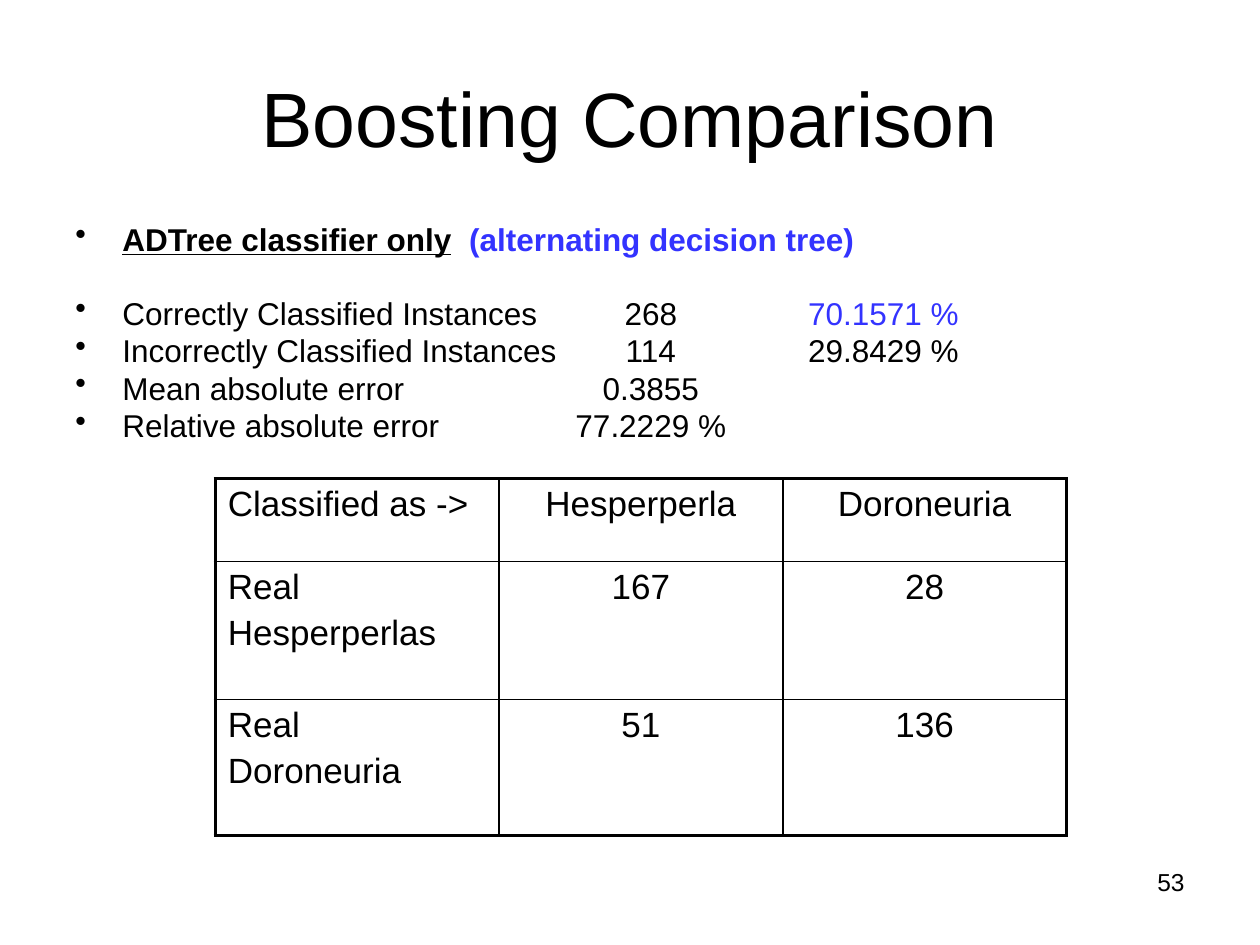
from dataclasses import dataclass

from lxml import etree
from pptx import Presentation
from pptx.dml.color import RGBColor
from pptx.enum.text import MSO_ANCHOR, PP_ALIGN
from pptx.oxml.ns import qn
from pptx.util import Cm, Pt

LEFT, CENTER, RIGHT = PP_ALIGN.LEFT, PP_ALIGN.CENTER, PP_ALIGN.RIGHT
TOP, MIDDLE = MSO_ANCHOR.TOP, MSO_ANCHOR.MIDDLE


@dataclass(frozen=True)
class Theme:
    font: str = "Arial"
    ink: str = "000000"
    accent: str = "3333FF"
    title: int = 44
    body: int = 18
    table: int = 20
    number: int = 14
    outer: float = 2.25
    inner: float = 1


THEME = Theme()

TITLE = "Boosting Comparison"
HEADING = ("ADTree classifier only", "(alternating decision tree)")
RESULTS = [
    ("Correctly Classified Instances", "268", "70.1571 %"),
    ("Incorrectly Classified Instances", "114", "29.8429 %"),
    ("Mean absolute error", "0.3855"),
    ("Relative absolute error", "77.2229 %"),
]
BEST = "70.1571 %"
MATRIX = [
    ("Classified as ->", "Hesperperla", "Doroneuria"),
    ("Real\nHesperperlas", "167", "28"),
    ("Real\nDoroneuria", "51", "136"),
]
NUMBER = "53"

COL_WIDTH = Cm(5.72)
ROW_HEIGHTS = [Cm(1.67), Cm(2.78), Cm(2.74)]
TABS = [(Cm(11.6), "ctr"), (Cm(14.77), "l")]
INDENT = Cm(0.95)
LINE_GAP, BLOCK_GAP = Pt(4.2), Pt(25)


def style(p, size, align=LEFT):
    p.alignment = align
    p.font.name = THEME.font
    p.font.size = Pt(size)
    p.font.color.rgb = RGBColor.from_string(THEME.ink)


def add_run(p, text, accent=False):
    r = p.add_run()
    r.text = text
    if accent:
        r.font.color.rgb = RGBColor.from_string(THEME.accent)
    return r


def add_box(s, left, top, width, height):
    tf = s.shapes.add_textbox(left, top, width, height).text_frame
    tf.word_wrap = True
    return tf


def add_bullet(p, gap):
    style(p, THEME.body)
    p.line_spacing = 0.8
    p.space_before = gap
    pPr = p._p.get_or_add_pPr()
    pPr.set("marL", str(INDENT))
    pPr.set("indent", str(-INDENT))
    bullet = etree.Element(qn("a:buChar"), char="•")
    tabs = etree.Element(qn("a:tabLst"))
    for pos, align in TABS:
        etree.SubElement(tabs, qn("a:tab"), pos=str(pos), algn=align)
    defaults = pPr.find(qn("a:defRPr"))
    defaults.addprevious(bullet)
    defaults.addprevious(tabs)


def add_results(s):
    tf = add_box(s, Cm(1.27), Cm(4.45), Cm(20), Cm(4.98))
    p = tf.paragraphs[0]
    add_bullet(p, LINE_GAP)
    p.font.bold = True
    name, note = HEADING
    add_run(p, name).font.underline = True
    add_run(p, "  ")
    add_run(p, note, accent=True)
    for i, row in enumerate(RESULTS):
        p = tf.add_paragraph()
        add_bullet(p, LINE_GAP if i else BLOCK_GAP)
        for j, value in enumerate(row):
            add_run(p, "\t" + value if j else value, accent=value == BEST)


def set_borders(cell, row, col):
    last = len(MATRIX) - 1
    edges = {"lnL": col == 0, "lnR": col == last, "lnT": row == 0, "lnB": row == last}
    tcPr = cell._tc.get_or_add_tcPr()
    for tag, is_outer in edges.items():
        width = Pt(THEME.outer if is_outer else THEME.inner)
        ln = etree.SubElement(tcPr, qn("a:" + tag), w=str(width))
        fill = etree.SubElement(ln, qn("a:solidFill"))
        etree.SubElement(fill, qn("a:srgbClr"), val=THEME.ink)


def add_matrix(s):
    n = len(MATRIX)
    table = s.shapes.add_table(
        n, n, Cm(4.34), Cm(9.65), COL_WIDTH * n, sum(ROW_HEIGHTS)
    ).table
    table.first_row = table.horz_banding = False
    for col in table.columns:
        col.width = COL_WIDTH
    for i, values in enumerate(MATRIX):
        table.rows[i].height = ROW_HEIGHTS[i]
        for j, value in enumerate(values):
            cell = table.cell(i, j)
            set_borders(cell, i, j)
            cell.fill.background()
            cell.vertical_anchor = TOP
            cell.text_frame.text = value
            for p in cell.text_frame.paragraphs:
                style(p, THEME.table, CENTER if j else LEFT)
                p.space_before = Pt(4)


def main():
    prs = Presentation()
    prs.slide_width, prs.slide_height = Cm(25.4), Cm(19.05)
    s = prs.slides.add_slide(prs.slide_layouts[5])

    title = s.shapes.title
    title.left, title.top = Cm(1.27), Cm(0.76)
    title.width, title.height = Cm(22.86), Cm(3.18)
    title.text_frame.text = TITLE
    title.text_frame.vertical_anchor = MIDDLE
    style(title.text_frame.paragraphs[0], THEME.title, CENTER)

    add_results(s)
    add_matrix(s)

    p = add_box(s, Cm(18.21), Cm(17.35), Cm(5.92), Cm(1.32)).paragraphs[0]
    add_run(p, NUMBER)
    style(p, THEME.number, RIGHT)

    prs.save("out.pptx")


if __name__ == "__main__":
    main()
